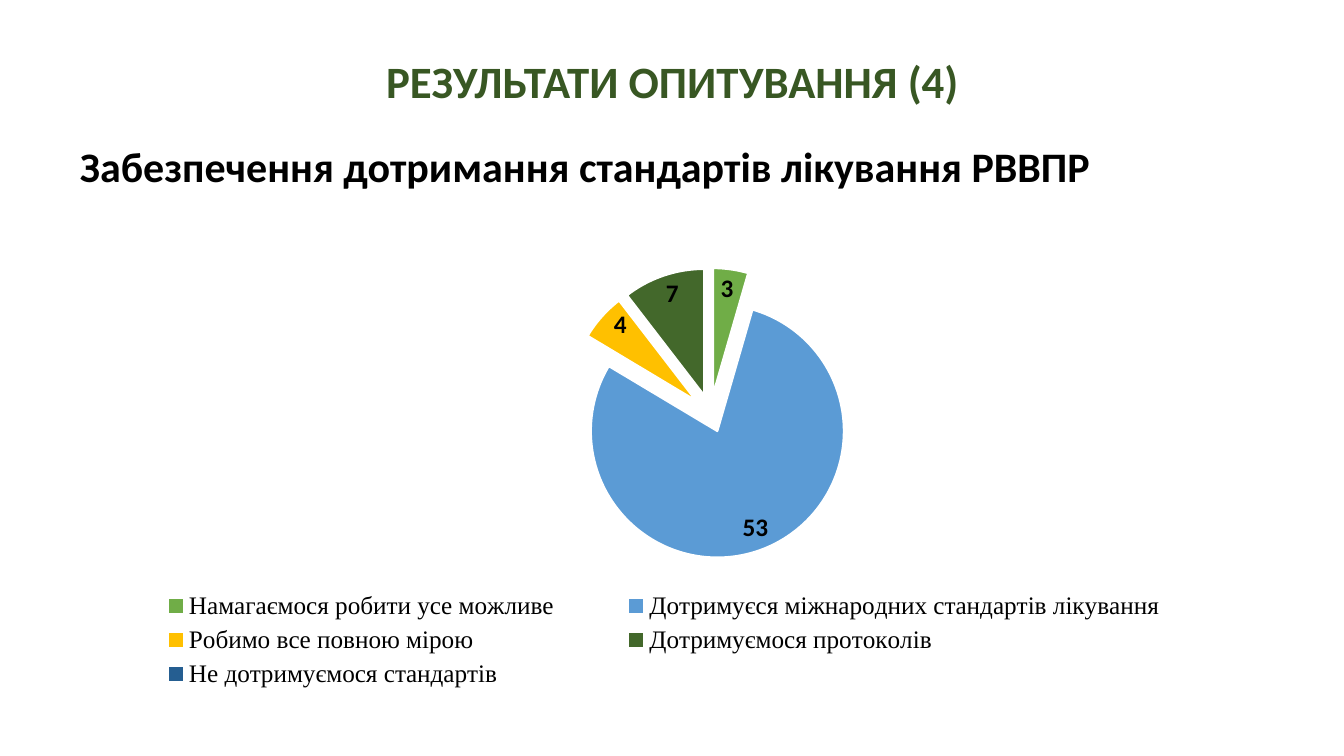
"""Builds the survey results slide with an exploded pie chart."""
from lxml import etree
from pptx import Presentation
from pptx.chart.data import CategoryChartData
from pptx.dml.color import RGBColor as RGB
from pptx.enum.chart import XL_CHART_TYPE as CT, XL_LABEL_POSITION as LP, XL_LEGEND_POSITION as LEG
from pptx.enum.text import MSO_ANCHOR as ANCHOR, PP_ALIGN as ALIGN
from pptx.oxml.ns import qn
from pptx.util import Emu, Pt

THEME = {
    "title": "385723", "text": "000000", "edge": "FFFFFF",
    "title_size": 32, "subtitle_size": 30, "chart_size": 18,
    "font": "Calibri", "legend_font": "Times New Roman",
}
ANSWERS = [
    ("Намагаємося робити усе можливе", 3, "70AD47"),
    ("Дотримуєся міжнародних стандартів лікування", 53, "5B9BD5"),
    ("Робимо все повною мірою", 4, "FFC000"),
    ("Дотримуємося протоколів", 7, "43682B"),
    ("Не дотримуємося стандартів", 0, "255E91"),
]
CHART_W, CHART_H = 1137, 483
PLOT_BOX = (98, 42, 1039, 291)
LEGEND_BOX = (9, 359, 1124, 110)
EXPLOSION = 15


def px(*lengths):
    return [Emu(round(n * 914400 / 100.8)) for n in lengths]


def add_text(text, box, size, color, align=ALIGN.LEFT, anchor=ANCHOR.TOP, before=0):
    tf = s.shapes.add_textbox(*px(*box)).text_frame
    tf.word_wrap = True
    tf.vertical_anchor = anchor
    p = tf.paragraphs[0]
    p.alignment, p.line_spacing, p.space_before = align, 0.9, Pt(before)
    r = p.add_run()
    r.text = text
    r.font.name, r.font.size, r.font.bold = THEME["font"], Pt(size), True
    r.font.color.rgb = RGB.from_string(color)


prs = Presentation()
prs.slide_width, prs.slide_height = px(1344, 756)
s = prs.slides.add_slide(prs.slide_layouts[6])

add_text("РЕЗУЛЬТАТИ ОПИТУВАННЯ (4)", (93, 41, 1159, 87), THEME["title_size"],
         THEME["title"], align=ALIGN.CENTER, anchor=ANCHOR.MIDDLE)
add_text("Забезпечення дотримання стандартів лікування РВВПР", (70, 141, 1159, 61),
         THEME["subtitle_size"], THEME["text"], before=10)

data = CategoryChartData()
data.categories = [name for name, _, _ in ANSWERS]
data.add_series("Series 1", [value for _, value, _ in ANSWERS])
chart = s.shapes.add_chart(CT.PIE, *px(93, 226, CHART_W, CHART_H), data).chart
chart.has_title = False
chart.font.name, chart.font.size = THEME["font"], Pt(10)
chart.font.color.rgb = RGB.from_string(THEME["text"])

chart.has_legend = True
legend = chart.legend
legend.position, legend.include_in_layout = LEG.BOTTOM, False
legend.font.name, legend.font.size = THEME["legend_font"], Pt(THEME["chart_size"])
legend.font.color.rgb = RGB.from_string(THEME["text"])

plot = chart.plots[0]
plot.vary_by_categories = True
series = plot.series[0]
for i, (_, _, color) in enumerate(ANSWERS):
    fmt = series.points[i].format
    fmt.fill.solid()
    fmt.fill.fore_color.rgb = RGB.from_string(color)
    fmt.line.color.rgb = RGB.from_string(THEME["edge"])
    fmt.line.width = Pt(1.5)

labels = series.data_labels
labels.show_value, labels.position = True, LP.BEST_FIT
labels.number_format, labels.number_format_is_linked = "0;;;", False
labels.font.name, labels.font.size, labels.font.bold = THEME["font"], Pt(THEME["chart_size"]), True
labels.font.color.rgb = RGB.from_string(THEME["text"])

explosion = etree.Element(qn("c:explosion"), val=str(EXPLOSION))
series._element.find(qn("c:dPt")).addprevious(explosion)

area = chart._chartSpace.chart.plotArea
key = chart._chartSpace.chart.find(qn("c:legend"))
for part, index, target, (x, y, w, h) in [
    (area, 0, {"layoutTarget": "inner"}, PLOT_BOX),
    (key, 1, {}, LEGEND_BOX),
]:
    for old in part.findall(qn("c:layout")):
        part.remove(old)
    layout = etree.Element(qn("c:layout"))
    manual = etree.SubElement(layout, qn("c:manualLayout"))
    settings = {**target, "xMode": "edge", "yMode": "edge", "x": x / CHART_W,
                "y": y / CHART_H, "w": w / CHART_W, "h": h / CHART_H}
    for tag, value in settings.items():
        etree.SubElement(manual, qn(f"c:{tag}"), val=str(value))
    part.insert(index, layout)

prs.save("out.pptx")
